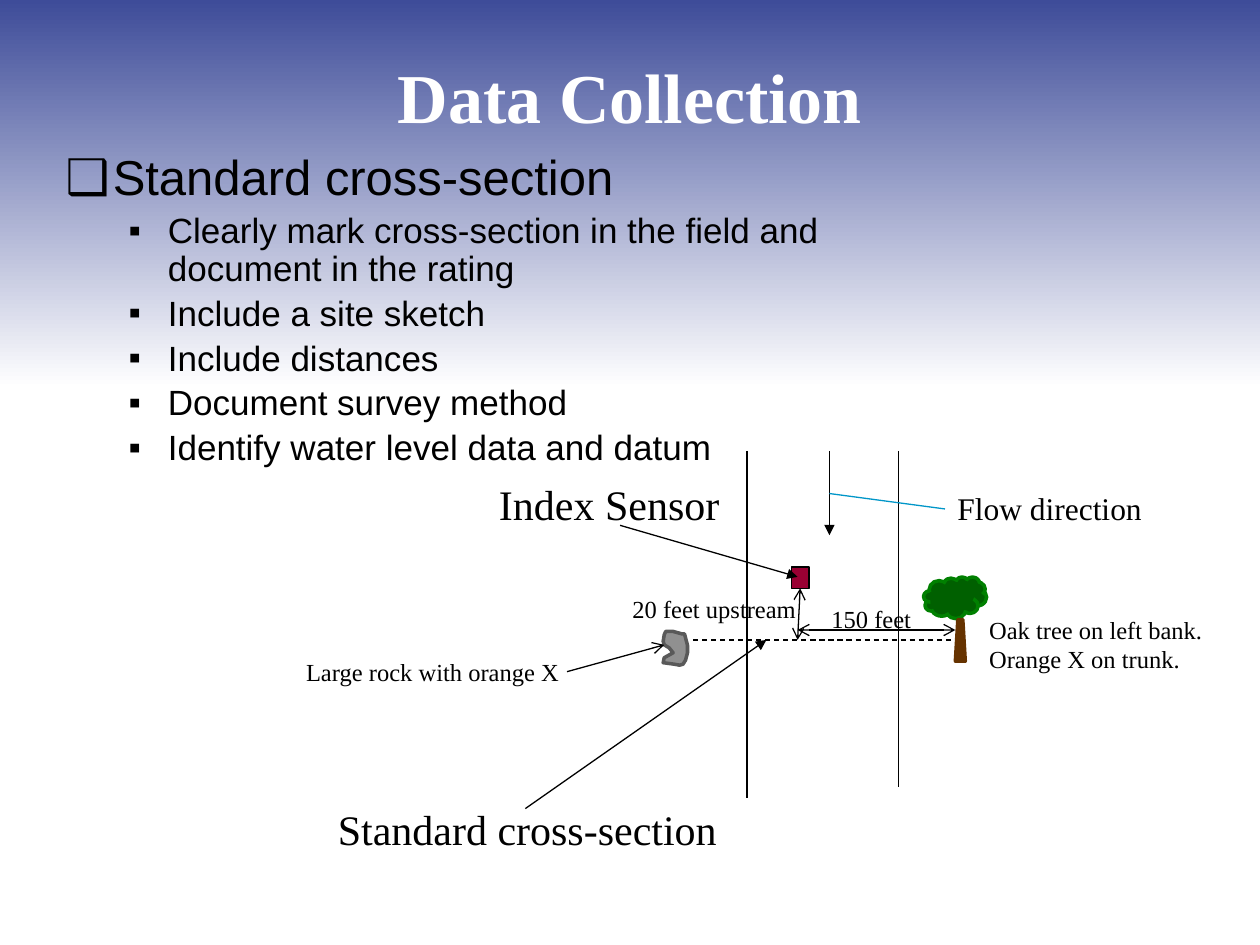
from lxml import etree
from pptx import Presentation
from pptx import util as u
from pptx.dml.color import RGBColor
from pptx.enum import dml, shapes, text
from pptx.oxml.ns import qn

BLACK = RGBColor(0x00, 0x00, 0x00)
WHITE = RGBColor(0xFF, 0xFF, 0xFF)
SKY = RGBColor(0x3E, 0x4C, 0x99)
SENSOR_RED = RGBColor(0x99, 0x00, 0x33)
LEADER_BLUE = RGBColor(0x00, 0x96, 0xC8)
LEAF = RGBColor(0x00, 0x60, 0x00)
LEAF_EDGE = RGBColor(0x00, 0x80, 0x00)
BARK = RGBColor(0x66, 0x33, 0x00)
ROCK = RGBColor(0x90, 0x90, 0x90)
ROCK_EDGE = RGBColor(0x59, 0x59, 0x59)
SERIF, SANS = "Times New Roman", "Arial"

ROCK_OUTLINE = [(46, 8), (52, 31), (52, 46), (48, 61), (43, 69), (36, 71),
                (25, 69), (3, 66), (5, 56), (23, 46), (15, 36), (5, 30),
                (3, 23), (5, 10), (8, 3), (23, 3), (41, 8)]
TOPIC = "Standard cross-section"
STEPS = ["Clearly mark cross-section in the field and document in the rating",
         "Include a site sketch",
         "Include distances",
         "Document survey method",
         "Identify water level data and datum"]


def place(part, left, top, width, height):
    part.left, part.top = u.Cm(left), u.Cm(top)
    part.width, part.height = u.Cm(width), u.Cm(height)


def style_runs(paragraph, size, face, colour, bold=False):
    for run in paragraph.runs:
        run.font.size = u.Pt(size)
        run.font.name = face
        run.font.bold = bold
        run.font.color.rgb = colour


def paint(part, fill, edge, weight):
    part.shadow.inherit = False
    part.fill.solid()
    part.fill.fore_color.rgb = fill
    part.line.color.rgb = edge
    part.line.width = u.Pt(weight)


def add_sky(slide, left, top, width, height):
    sky = slide.shapes.add_shape(shapes.MSO_SHAPE.RECTANGLE, u.Cm(left),
                                 u.Cm(top), u.Cm(width), u.Cm(height))
    sky.shadow.inherit = False
    sky.line.fill.background()
    sky.fill.gradient()
    sky.fill.gradient_angle = 270
    for stop, colour, position in zip(sky.fill.gradient_stops, (SKY, WHITE), (0, 1)):
        stop.color.rgb = colour
        stop.position = position
    slide.shapes._spTree.insert(2, sky._element)


def add_title(slide, left, top, width, height):
    title = slide.shapes.title
    place(title, left, top, width, height)
    frame = title.text_frame
    frame.text = "Data Collection"
    frame.auto_size = text.MSO_AUTO_SIZE.NONE
    frame.vertical_anchor = text.MSO_ANCHOR.MIDDLE
    heading = frame.paragraphs[0]
    heading.alignment = text.PP_ALIGN.CENTER
    style_runs(heading, 40, SERIF, WHITE, bold=True)
    fill = heading.runs[0].font._element.find(qn("a:solidFill"))
    effects = etree.Element(qn("a:effectLst"))
    shadow = etree.SubElement(effects, qn("a:outerShdw"), dist="38100", dir="2700000")
    etree.SubElement(shadow, qn("a:srgbClr"), val=str(BLACK))
    fill.addnext(effects)


def format_bullet(paragraph, mark, margin, hang):
    properties = paragraph._p.get_or_add_pPr()
    properties.set("marL", str(u.Cm(margin)))
    properties.set("indent", str(-u.Cm(hang)))
    etree.SubElement(properties, qn("a:buFont"), typeface=SANS)
    etree.SubElement(properties, qn("a:buChar"), char=mark)
    paragraph.line_spacing = 0.9


def add_steps(slide, left, top, width, height):
    body = slide.placeholders[1]
    place(body, left, top, width, height)
    frame = body.text_frame
    frame.auto_size = text.MSO_AUTO_SIZE.NONE
    frame.text = TOPIC
    topic = frame.paragraphs[0]
    format_bullet(topic, "❑", 0.95, 0.95)
    topic.space_before = u.Pt(0)
    style_runs(topic, 28, SANS, BLACK)
    for wording in STEPS:
        step = frame.add_paragraph()
        step.text = wording
        step.level = 1
        format_bullet(step, "▪", 2.06, 0.79)
        step.space_before = u.Pt(4)
        style_runs(step, 20, SANS, BLACK)


def add_sketch(slide, left, top):
    canvas = slide.shapes

    def line(x1, y1, x2, y2, head=None, tail=None, colour=BLACK, dash=None):
        stroke = canvas.add_connector(shapes.MSO_CONNECTOR.STRAIGHT,
                                      u.Cm(left + x1), u.Cm(top + y1),
                                      u.Cm(left + x2), u.Cm(top + y2))
        stroke.line.color.rgb = colour
        stroke.line.width = u.Pt(0.75)
        if dash:
            stroke.line.dash_style = dash
        outline = stroke.line._get_or_add_ln()
        for tag, tip in (("a:headEnd", head), ("a:tailEnd", tail)):
            if tip:
                etree.SubElement(outline, qn(tag), type=tip)
        etree.SubElement(stroke._element.spPr, qn("a:effectLst"))

    def label(wording, x, y, width, height, size, wrap=True):
        caption = canvas.add_textbox(u.Cm(left + x), u.Cm(top + y),
                                     u.Cm(width), u.Cm(height))
        caption.text_frame.word_wrap = wrap
        caption.text_frame.text = wording
        style_runs(caption.text_frame.paragraphs[0], size, SERIF, BLACK)

    def solid(kind, x, y, width, height, fill, edge, weight):
        part = canvas.add_shape(kind, u.Cm(left + x), u.Cm(top + y),
                                u.Cm(width), u.Cm(height))
        paint(part, fill, edge, weight)

    line(9.14, 0, 9.14, 6.99)
    line(12.19, 0, 12.19, 6.78)
    line(10.8, 0, 10.8, 1.7, tail="triangle")
    solid(shapes.MSO_SHAPE.RECTANGLE, 10.03, 2.34, 0.36, 0.43, SENSOR_RED, BLACK, 0.75)
    label("Index Sensor", 3.89, 0.43, 5, 1.3, 24, wrap=False)
    line(6.58, 1.5, 10.16, 2.54, tail="triangle")

    line(8.05, 3.81, 13.28, 3.81, dash=dml.MSO_LINE.DASH)
    label(TOPIC, 0.64, 6.99, 8.69, 1.27, 24)
    line(4.67, 7.21, 9.53, 3.81, tail="triangle")

    label("Flow direction", 13.13, 0.64, 4.45, 1.02, 18)
    line(10.8, 0.86, 13.13, 1.17, colour=LEADER_BLUE)

    solid(shapes.MSO_SHAPE.CLOUD, 12.7, 2.54, 1.27, 0.84, LEAF, LEAF_EDGE, 2)
    solid(shapes.MSO_SHAPE.TRAPEZOID, 13.34, 3.4, 0.2, 0.84, BARK, BARK, 2)
    label("Oak tree on left bank. Orange X on trunk.", 13.77, 3.18, 5.28, 1.45, 14)

    line(10.21, 2.77, 10.16, 3.81, head="arrow", tail="arrow")
    label("20 feet upstream", 6.58, 2.77, 3.81, 0.86, 14)
    line(10.16, 3.61, 13.34, 3.61, head="arrow", tail="arrow")
    label("150 feet", 10.59, 2.97, 2.34, 0.86, 14)

    outline = canvas.build_freeform(*ROCK_OUTLINE[0], scale=u.Cm(0.01))
    outline.add_line_segments(ROCK_OUTLINE[1:], close=True)
    rock = outline.convert_to_shape(u.Cm(left + 7.42), u.Cm(top + 3.61))
    paint(rock, ROCK, ROCK_EDGE, 2)
    line(5.51, 4.45, 7.47, 3.91, tail="arrow")
    label("Large rock with orange X", 0, 4.04, 5.72, 0.86, 14)


def main():
    deck = Presentation()
    deck.slide_width, deck.slide_height = u.Cm(25.4), u.Cm(19.05)
    slide = deck.slides.add_slide(deck.slide_layouts[1])
    add_sky(slide, 0, 0, 25.4, 7.82)
    add_title(slide, 1.27, 1.07, 22.86, 1.7)
    add_steps(slide, 1.07, 2.97, 18.42, 11.46)
    add_sketch(slide, 5.92, 9.09)
    deck.save("out.pptx")


if __name__ == "__main__":
    main()
